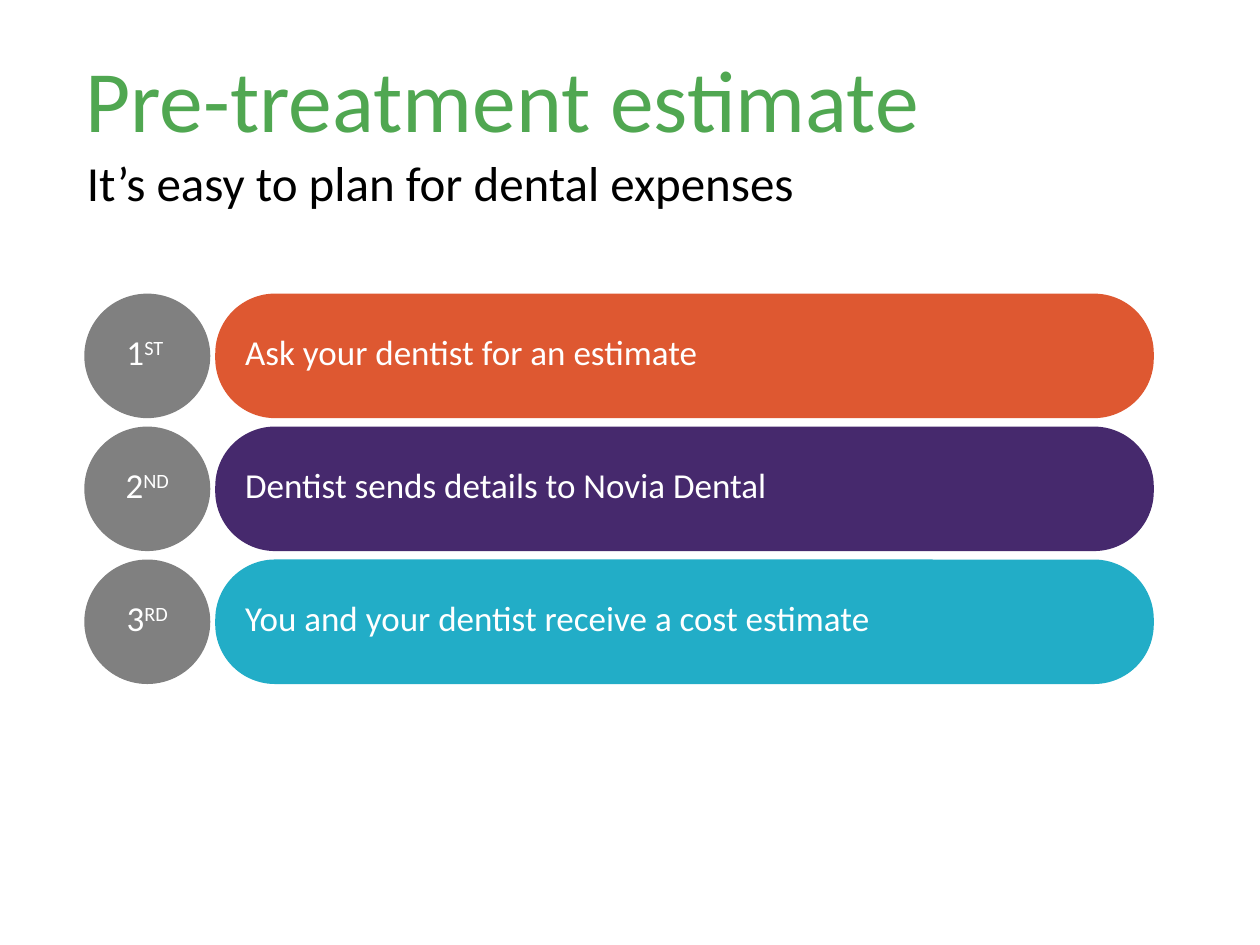
from pptx import Presentation
from pptx.dml.color import RGBColor
from pptx.enum import shapes, text
from pptx.util import Cm, Pt

GREEN = RGBColor(0x50, 0xA7, 0x51)
BLACK = RGBColor(0, 0, 0)
WHITE = RGBColor(0xFF, 0xFF, 0xFF)
GRAY = RGBColor(0x80, 0x80, 0x80)
ORANGE = RGBColor(0xDE, 0x58, 0x31)
PURPLE = RGBColor(0x46, 0x29, 0x6D)
TEAL = RGBColor(0x22, 0xAD, 0xC7)

STEPS = [
    ("1", "ST ", "Ask your dentist for an estimate", ORANGE),
    ("2", "ND", "Dentist sends details to Novia Dental", PURPLE),
    ("3", "RD", "You and your dentist receive a cost estimate", TEAL),
]


def write(holder, words, size=20, color=WHITE, spacing=0.8, raised="",
          align=text.PP_ALIGN.LEFT, anchor=text.MSO_ANCHOR.MIDDLE):
    frame = holder.text_frame
    frame.word_wrap = True
    frame.vertical_anchor = anchor
    line = frame.paragraphs[0]
    line.alignment = align
    line.line_spacing = spacing
    for part in filter(None, (words, raised)):
        run = line.add_run()
        run.text = part
        run.font.name = "Calibri"
        run.font.size = Pt(size)
        run.font.color.rgb = color
    if raised:
        run.font._element.set("baseline", "30000")


def add_filled(slide, kind, color, left, top, width, height):
    shape = slide.shapes.add_shape(kind, left, top, width, height)
    shape.shadow.inherit = False
    shape.fill.solid()
    shape.fill.fore_color.rgb = color
    shape.line.fill.background()
    return shape


def add_heading(slide, left, top, width):
    title = slide.shapes.add_textbox(left, top, width, Cm(1.88))
    write(title, "Pre-treatment estimate", size=50, color=GREEN,
          spacing=0.9, anchor=text.MSO_ANCHOR.TOP)
    subtitle = slide.shapes.add_textbox(left + Cm(0.03), top + Cm(1.93), width, Cm(1.45))
    write(subtitle, "It’s easy to plan for dental expenses", size=28,
          color=BLACK, spacing=1.0, anchor=text.MSO_ANCHOR.TOP)


def add_steps(slide, left, top, width, height):
    row_gap, column_gap, circle_width = Cm(0.17), Cm(0.1), Cm(2.54)
    row_height = (height - row_gap * (len(STEPS) - 1)) // len(STEPS)
    bar_offset = circle_width + column_gap
    for index, (number, ordinal, action, color) in enumerate(STEPS):
        row_top = top + index * (row_height + row_gap)
        circle = add_filled(slide, shapes.MSO_SHAPE.FLOWCHART_CONNECTOR, GRAY,
                            left, row_top, circle_width, row_height)
        write(circle, number, raised=ordinal, align=text.PP_ALIGN.CENTER)
        bar = add_filled(slide, shapes.MSO_SHAPE.ROUNDED_RECTANGLE, color,
                         left + bar_offset, row_top, width - bar_offset, row_height)
        bar.adjustments[0] = 0.48
        write(bar, action)


def main():
    deck = Presentation()
    deck.slide_width, deck.slide_height = Cm(25.4), Cm(19.05)
    slide = deck.slides.add_slide(deck.slide_layouts[6])
    add_heading(slide, Cm(1.47), Cm(1.02), Cm(21.77))
    add_steps(slide, Cm(1.7), Cm(5.92), Cm(21.56), Cm(7.87))
    deck.save("out.pptx")


if __name__ == "__main__":
    main()
